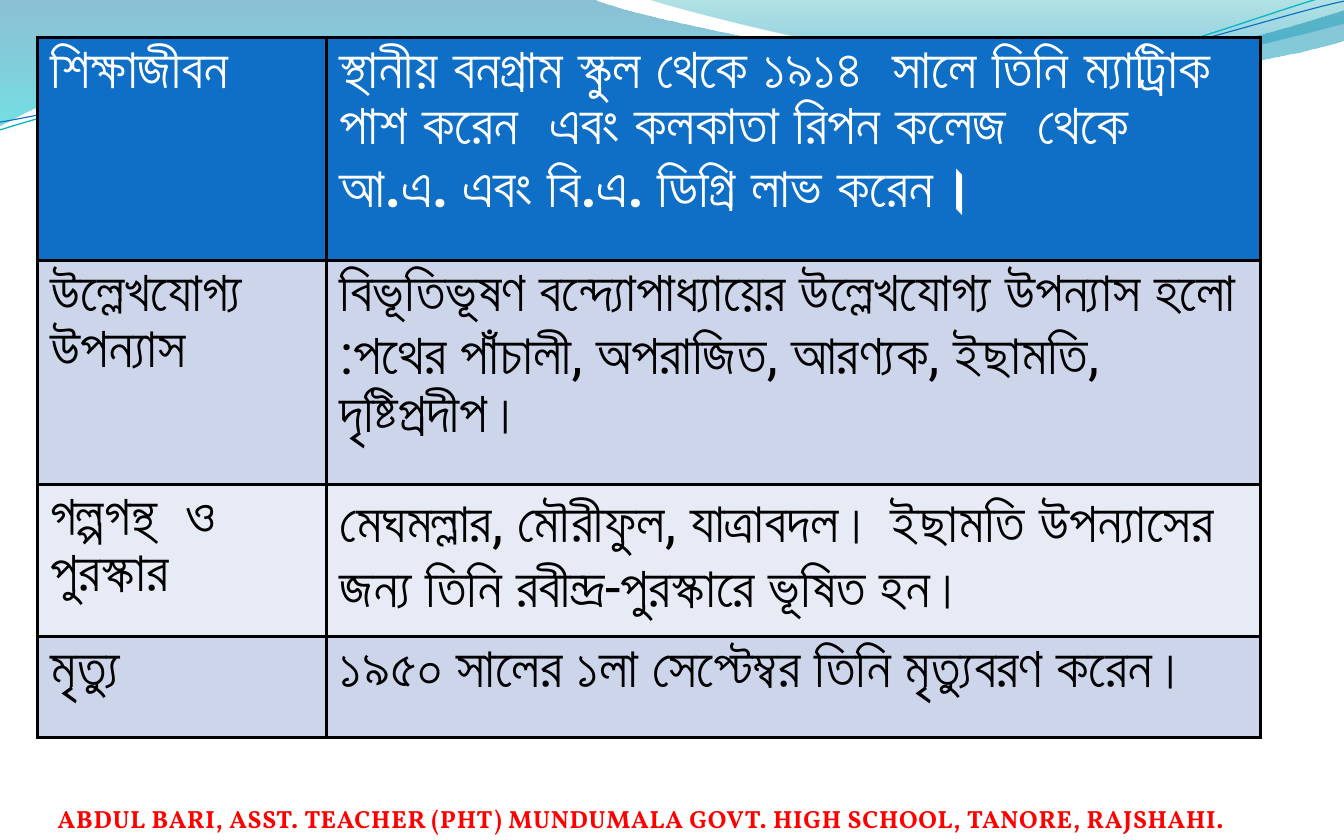
from dataclasses import dataclass
from math import cos, radians, sin
from typing import Optional

from lxml.etree import SubElement
from pptx import Presentation
from pptx.dml.color import RGBColor
from pptx.enum.text import MSO_AUTO_SIZE, PP_ALIGN
from pptx.oxml.ns import qn
from pptx.util import Cm, Pt

BLACK = RGBColor(0x00, 0x00, 0x00)
WHITE = RGBColor(0xFF, 0xFF, 0xFF)
RED = RGBColor(0xFF, 0x00, 0x00)
BLUE = RGBColor(0x0F, 0x6F, 0xC6)
CYAN = RGBColor(0x0A, 0xB8, 0xBF)
DARK_BAND = RGBColor(0xCC, 0xD5, 0xEA)
LIGHT_BAND = RGBColor(0xE7, 0xEB, 0xF5)

GRID = Cm(2.54)  # unit of the wave coordinates


@dataclass
class GradientStop:
    position: float
    color: RGBColor
    opacity: int  # percent


@dataclass
class Wave:
    start: tuple
    segments: list  # 2 numbers: line end; 6 numbers: Bézier controls and end
    gradient: Optional[tuple] = None
    line_color: Optional[RGBColor] = None
    line_width: float = 0
    center: tuple = (0, 0)
    rotation: float = 0


@dataclass
class Row:
    label: str
    detail: str
    height: float
    fill: RGBColor
    text_color: RGBColor = BLACK
    bold: bool = False


WAVES = [
    Wave((0, 0), [
        (5.28, -0.01),
        (5.71, 0.17, 7.96, 0.63, 9.1, 0.63),
        (10.24, 0.63, 11.5, 0.26, 12, 0.09),
        (12.01, 0.36),
        (11.8, 0.44, 10.44, 0.76, 8.95, 0.75),
        (7.46, 0.75, 4.58, 0.28, 3.09, 0.34),
        (1.55, 0.36, 0.55, 0.83, -0.01, 1.13),
        (0, 0),
    ], gradient=(GradientStop(0, RGBColor(0x00, 0x74, 0xA1), 45),
                 GradientStop(1, RGBColor(0x00, 0xC6, 0xCF), 55))),
    Wave((5.75, -0.01), [
        (6.11, 0.11, 8.18, 0.62, 9.23, 0.65),
        (10.27, 0.69, 11.54, 0.32, 12, 0.21),
        (12, 0),
        (5.75, -0.01),
    ], gradient=(GradientStop(0, RGBColor(0x00, 0xA1, 0xA9), 30),
                 GradientStop(0.8, RGBColor(0x00, 0x8B, 0xBF), 45))),
    Wave((0, 1.16), [
        (0.58, 0.98, 1.89, 0.6, 3.32, 0.54),
        (4.75, 0.48, 7.11, 0.88, 8.55, 0.78),
        (9.99, 0.68, 11.26, 0.11, 11.98, -0.07),
    ], line_color=CYAN, line_width=0.85, center=(5.99, 0.58), rotation=-2.7),
    Wave((0, 1.09), [
        (0.56, 1, 1.97, 0.64, 3.4, 0.58),
        (4.83, 0.52, 7.17, 0.83, 8.6, 0.73),
        (10.03, 0.64, 11.29, 0.16, 12, 0.01),
    ], line_color=BLUE, line_width=0.75, center=(6, 0.59), rotation=-2.7),
]

ROWS = [
    Row("শিক্ষাজীবন",
        "স্থানীয় বনগ্রাম স্কুল থেকে ১৯১৪  সালে তিনি ম্যাট্রিাক পাশ করেন  এবং কলকাতা রিপন কলেজ  থেকে আ.এ. এবং বি.এ. ডিগ্রি লাভ করেন।",
        5.06, BLUE, WHITE, True),
    Row("উল্লেখযোগ্য উপন্যাস",
        "বিভূতিভূষণ বন্দ্যোপাধ্যায়ের উল্লেখযোগ্য উপন্যাস হলো :পথের পাঁচালী, অপরাজিত, আরণ্যক, ইছামতি, দৃষ্টিপ্রদীপ।",
        5.08, DARK_BAND),
    Row("গল্পগন্থ  ও পুরস্কার",
        "মেঘমল্লার, মৌরীফুল, যাত্রাবদল। ইছামতি উপন্যাসের জন্য তিনি রবীন্দ্র-পুরস্কারে ভূষিত হন।",
        3.45, LIGHT_BAND),
    Row("মৃত্যু", "১৯৫০ সালের ১লা সেপ্টেম্বর তিনি মৃত্যুবরণ করেন।", 2.29, DARK_BAND),
]
COLUMN_WIDTHS = (6.56, 21.17)


def unrotated(point: tuple, wave: Wave) -> tuple:
    """Undo the wave's rotation and give the point in slide units."""
    angle = radians(-wave.rotation)
    x, y = point[0] - wave.center[0], point[1] - wave.center[1]
    return (round((wave.center[0] + x * cos(angle) - y * sin(angle)) * GRID),
            round((wave.center[1] + x * sin(angle) + y * cos(angle)) * GRID))


def bend_segments(shape, segments: list) -> None:
    """Join each three lines that stand for a curve into one Bézier."""
    lines = iter(list(shape.element.iter(qn("a:lnTo"))))
    for segment in segments:
        line = next(lines)
        if len(segment) == 6:
            line.tag = qn("a:cubicBezTo")
            for _ in range(2):
                extra = next(lines)
                line.append(extra[0])
                extra.getparent().remove(extra)


def draw_wave(slide, wave: Wave) -> None:
    points = [segment[i:i + 2] for segment in wave.segments
              for i in range(0, len(segment), 2)]
    builder = slide.shapes.build_freeform(*unrotated(wave.start, wave))
    builder.add_line_segments([unrotated(point, wave) for point in points],
                              close=wave.gradient is not None)
    shape = builder.convert_to_shape()
    bend_segments(shape, wave.segments)
    shape.rotation = wave.rotation
    shape.shadow.inherit = False
    if wave.gradient is None:
        shape.fill.background()
        shape.line.color.rgb = wave.line_color
        shape.line.width = Pt(wave.line_width)
        return
    shape.line.fill.background()
    shape.fill.gradient()
    shape.fill.gradient_angle = 270
    for stop, wanted in zip(shape.fill.gradient_stops, wave.gradient):
        stop.position = wanted.position
        stop.color.rgb = wanted.color
    colors = shape.element.spPr.iter(qn("a:srgbClr"))
    for color, wanted in zip(colors, wave.gradient):
        SubElement(color, qn("a:alpha"), val=str(wanted.opacity * 1000))


def add_borders(cell, color: RGBColor, width: float) -> None:
    properties = cell._tc.get_or_add_tcPr()
    for side in ("a:lnL", "a:lnR", "a:lnT", "a:lnB"):
        line = SubElement(properties, qn(side), w=str(Pt(width)))
        fill = SubElement(line, qn("a:solidFill"))
        SubElement(fill, qn("a:srgbClr"), val=str(color))


def fill_cell(cell, text: str, row: Row) -> None:
    add_borders(cell, BLACK, 2.25)
    cell.fill.solid()
    cell.fill.fore_color.rgb = row.fill
    cell.margin_left = cell.margin_right = Cm(0.3)
    cell.margin_top = cell.margin_bottom = Cm(0.13)
    cell.text = text
    font = cell.text_frame.paragraphs[0].font
    font.name = "Roboto"
    font.size = Pt(36)
    font.bold = row.bold
    font.color.rgb = row.text_color


def draw_table(slide) -> None:
    frame = slide.shapes.add_table(
        len(ROWS), len(COLUMN_WIDTHS), Cm(0.85), Cm(0.85),
        Cm(sum(COLUMN_WIDTHS)), Cm(sum(row.height for row in ROWS)))
    table = frame.table
    for column, width in zip(table.columns, COLUMN_WIDTHS):
        column.width = Cm(width)
    for index, row in enumerate(ROWS):
        table.rows[index].height = Cm(row.height)
        for column, text in enumerate((row.label, row.detail)):
            fill_cell(table.cell(index, column), text, row)


def draw_footer(slide) -> None:
    box = slide.shapes.add_textbox(Cm(0.64), Cm(18.11), Cm(27.84), Cm(0.94))
    box.text_frame.word_wrap = False
    box.text_frame.auto_size = MSO_AUTO_SIZE.SHAPE_TO_FIT_TEXT
    paragraph = box.text_frame.paragraphs[0]
    paragraph.alignment = PP_ALIGN.CENTER
    run = paragraph.add_run()
    run.text = ("ABDUL BARI, ASST. TEACHER (PHT) MUNDUMALA GOVT. "
                "HIGH SCHOOL, TANORE, RAJSHAHI.")
    paragraph.font.name = "Vollkorn"
    paragraph.font.size = Pt(16)
    paragraph.font.bold = True
    paragraph.font.color.rgb = RED
    run._r.get_or_add_rPr().set("spc", "50")  # letter spacing of 0.5 pt


def main() -> None:
    presentation = Presentation()
    presentation.slide_width = Cm(30.48)
    presentation.slide_height = Cm(19.05)
    slide = presentation.slides.add_slide(presentation.slide_layouts[6])
    # Waves along the top edge
    for wave in WAVES:
        draw_wave(slide, wave)
    # Footer and biography table
    draw_footer(slide)
    draw_table(slide)
    presentation.save("out.pptx")


if __name__ == "__main__":
    main()
